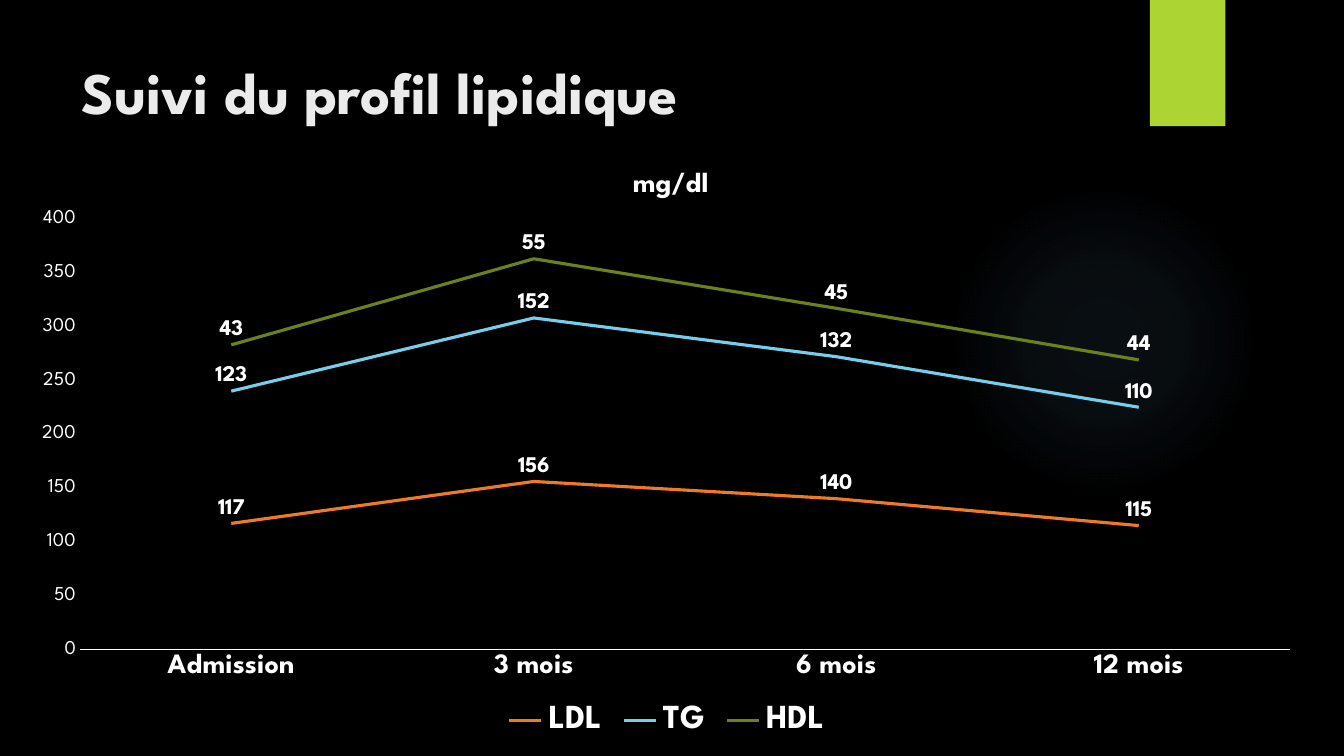
from lxml import etree
from pptx import Presentation
from pptx.chart.data import CategoryChartData
from pptx.dml.color import RGBColor
from pptx.enum.chart import XL_CHART_TYPE as ChartType, XL_LABEL_POSITION as LabelPosition
from pptx.enum.chart import XL_LEGEND_POSITION as LegendPosition, XL_MARKER_STYLE as Marker
from pptx.enum.chart import XL_TICK_MARK as Tick
from pptx.enum.shapes import MSO_SHAPE as Shape
from pptx.enum.text import MSO_ANCHOR as Anchor
from pptx.oxml import parse_xml
from pptx.oxml.ns import nsdecls, qn
from pptx.util import Cm, Pt

THEME = {
    "font": "League Spartan",
    "black": "000000", "white": "FFFFFF", "title": "EBEBEB",
    "accent": "ACD433", "glow": "7AC4F0",
    "title_size": 42, "legend_size": 24, "heading_size": 20,
    "label_size": 16, "axis_size": 14, "base_size": 10,
}
MONTHS = ["Admission", "3 mois", "6 mois", "12 mois"]
LIPIDS = [
    ("LDL", "EF7A24", (117, 156, 140, 115)),
    ("TG", "75CEEC", (123, 152, 132, 110)),
    ("HDL", "69821B", (43, 55, 45, 44)),
]


def style(font, size, color="white", bold=False):
    font.name = THEME["font"]
    font.size = Pt(THEME[size])
    font.bold = bold
    font.color.rgb = RGBColor.from_string(THEME[color])


def place(parent, index, **values):
    layout = parent.find(qn("c:layout"))
    if layout is None:
        layout = etree.Element(qn("c:layout"))
        parent.insert(index, layout)
    manual = etree.SubElement(layout, qn("c:manualLayout"))
    for name, value in values.items():
        etree.SubElement(manual, qn(f"c:{name}")).set("val", str(value))


deck = Presentation()
deck.slide_width, deck.slide_height = Cm(33.87), Cm(19.05)
page = deck.slides.add_slide(deck.slide_layouts[6])
page.background.fill.solid()
page.background.fill.fore_color.rgb = RGBColor.from_string(THEME["black"])

glow = page.shapes.add_shape(Shape.OVAL, Cm(23.9), Cm(4.65), Cm(7.82), Cm(7.82))
glow.shadow.inherit = False
glow.line.fill.background()
glow.fill.background()
stops = "".join(
    f'<a:gs pos="{position * 1000}"><a:srgbClr val="{THEME["glow"]}">'
    f'<a:alpha val="{alpha * 1000}"/></a:srgbClr></a:gs>'
    for position, alpha in [(0, 7), (36, 6), (69, 0)]
)
gradient = parse_xml(
    f'<a:gradFill {nsdecls("a")} rotWithShape="1"><a:gsLst>{stops}</a:gsLst>'
    '<a:path path="circle"><a:fillToRect l="50000" t="50000" r="50000" b="50000"/>'
    '</a:path></a:gradFill>'
)
properties = glow.element.spPr
properties.replace(properties.find(qn("a:noFill")), gradient)

tab = page.shapes.add_shape(Shape.RECTANGLE, Cm(28.98), Cm(0), Cm(1.9), Cm(3.18))
tab.shadow.inherit = False
tab.line.fill.background()
tab.fill.solid()
tab.fill.fore_color.rgb = RGBColor.from_string(THEME["accent"])

box = page.shapes.add_textbox(Cm(1.8), Cm(1.27), Cm(26.14), Cm(3.89))
box.text_frame.word_wrap = True
box.text_frame.vertical_anchor = Anchor.TOP
span = box.text_frame.paragraphs[0].add_run()
span.text = "Suivi du profil lipidique"
style(span.font, "title_size", "title", True)

data = CategoryChartData(number_format="General")
data.categories = MONTHS
for name, color, values in LIPIDS:
    data.add_series(name, values)
chart = page.shapes.add_chart(
    ChartType.LINE_STACKED, Cm(0.41), Cm(3.53), Cm(32.79), Cm(15.19), data
).chart
style(chart.font, "base_size")

chart.has_title = True
span = chart.chart_title.text_frame.paragraphs[0].add_run()
span.text = "mg/dl"
style(span.font, "heading_size", bold=True)
title = chart.chart_title._element
place(title, 1, xMode="edge", yMode="edge", x=0.47, y=0.04)
plot_area = chart._chartSpace.chart.plotArea
place(plot_area, 0, layoutTarget="inner", xMode="edge", yMode="edge",
      x=0.049, y=0.131, w=0.93, h=0.714)

chart.has_legend = True
chart.legend.position = LegendPosition.BOTTOM
chart.legend.include_in_layout = False
style(chart.legend.font, "legend_size", bold=True)

months, levels = chart.category_axis, chart.value_axis
for axis in (months, levels):
    axis.has_major_gridlines = False
    axis.major_tick_mark = axis.minor_tick_mark = Tick.NONE
style(months.tick_labels.font, "heading_size", bold=True)
months.format.line.color.rgb = RGBColor.from_string(THEME["white"])
months.format.line.width = Pt(0.75)
style(levels.tick_labels.font, "axis_size")
levels.format.line.fill.background()
levels.minimum_scale, levels.maximum_scale, levels.major_unit = 0, 400, 50

plot = chart.plots[0]
plot.vary_by_categories = False
for series, (name, color, values) in zip(plot.series, LIPIDS):
    series.smooth = False
    series.marker.style = Marker.NONE
    series.format.line.color.rgb = RGBColor.from_string(color)
    series.format.line.width = Pt(2.25)
    labels = series.data_labels
    labels.show_value = True
    labels.position = LabelPosition.ABOVE
    style(labels.font, "label_size", bold=True)

deck.save("out.pptx")
